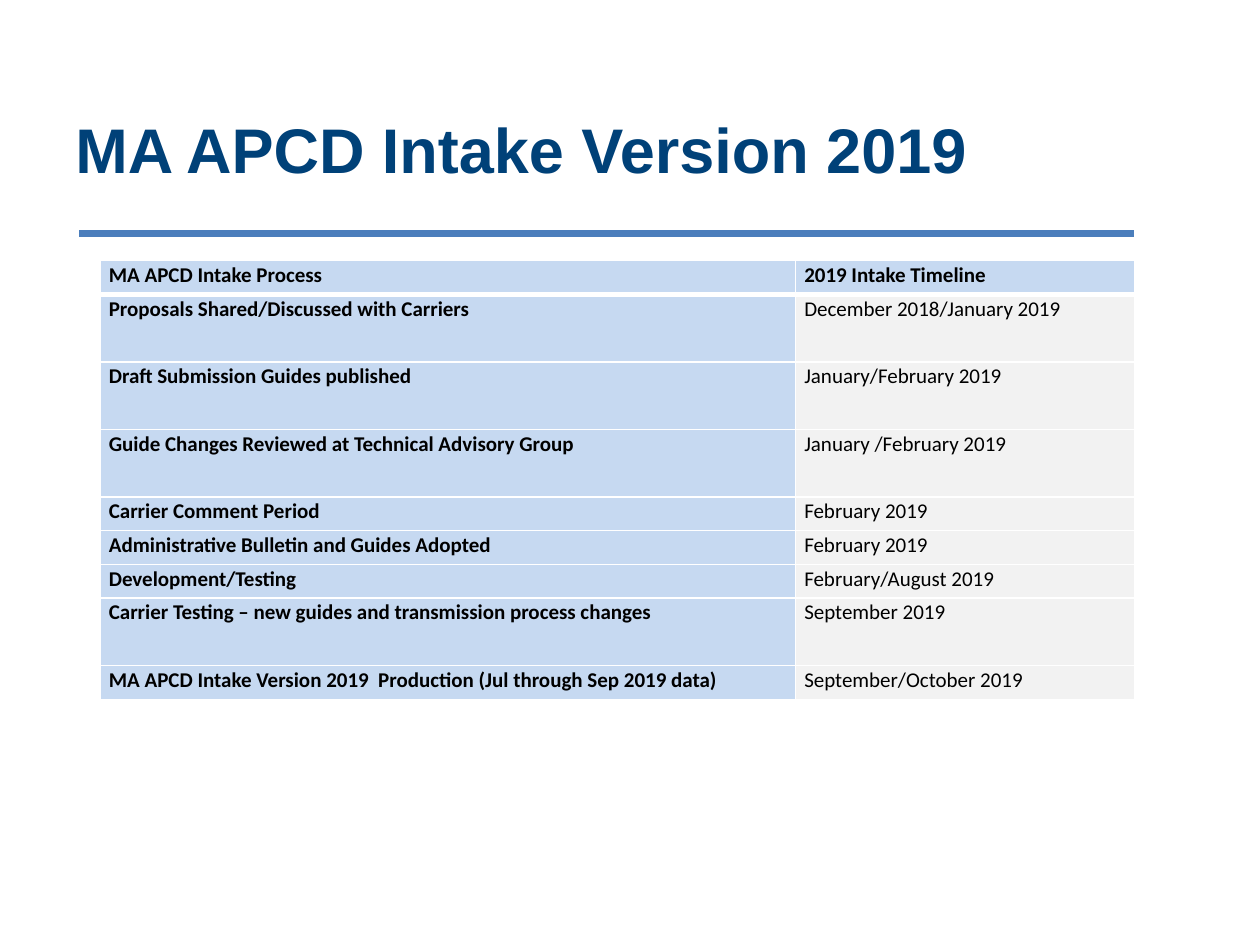
from dataclasses import dataclass
from lxml.etree import SubElement
from pptx import Presentation
from pptx.dml.color import RGBColor
from pptx.enum.shapes import MSO_CONNECTOR
from pptx.enum.text import MSO_ANCHOR
from pptx.oxml import parse_xml
from pptx.oxml.ns import nsdecls, qn
from pptx.util import Pt


@dataclass
class Theme:
    navy: str = "004178"
    rule: str = "4B7EBC"
    head: str = "C6D9F1"
    body: str = "F2F2F2"
    edge: str = "FFFFFF"
    ink: str = "000000"
    title: int = 36
    text: int = 12


theme = Theme()


def style(para, font, size, color, bold):
    for run in para.runs:
        run.font.name = font
        run.font.size = Pt(size)
        run.font.bold = bold
        run.font.color.rgb = RGBColor.from_string(color)


def border(cell, widths):
    props = cell._tc.get_or_add_tcPr()
    for spot, (side, width) in enumerate(widths.items()):
        line = parse_xml(
            f'<a:ln{side} {nsdecls("a")} w="{Pt(width)}"><a:solidFill>'
            f'<a:srgbClr val="{theme.edge}"/></a:solidFill></a:ln{side}>'
        )
        props.insert(spot, line)


deck = Presentation()
deck.slide_width, deck.slide_height = Pt(720), Pt(540)
slide = deck.slides.add_slide(deck.slide_layouts[6])

rule = slide.shapes.add_connector(
    MSO_CONNECTOR.STRAIGHT, Pt(45.2), Pt(133.3), Pt(648), Pt(133.3)
)
rule.line.color.rgb = RGBColor.from_string(theme.rule)
rule.line.width = Pt(4)
SubElement(rule._element.spPr, qn("a:effectLst"))

title = slide.shapes.add_textbox(Pt(36), Pt(44.6), Pt(612), Pt(80))
frame = title.text_frame
frame.word_wrap = True
frame.vertical_anchor = MSO_ANCHOR.MIDDLE
frame.text = "MA APCD Intake Version 2019"
style(frame.paragraphs[0], "Arial", theme.title, theme.navy, True)

unit = 19.3
rows = [
    ("MA APCD Intake Process", "2019 Intake Timeline", 1),
    ("Proposals Shared/Discussed with Carriers", "December 2018/January 2019", 2),
    ("Draft Submission Guides published", "January/February 2019", 2),
    ("Guide Changes Reviewed at Technical Advisory Group", "January /February 2019", 2),
    ("Carrier Comment Period", "February 2019", 1),
    ("Administrative Bulletin and Guides Adopted", "February 2019", 1),
    ("Development/Testing", "February/August 2019", 1),
    ("Carrier Testing – new guides and transmission process changes", "September 2019", 2),
    ("MA APCD Intake Version 2019  Production (Jul through Sep 2019 data)",
     "September/October 2019", 1),
]
wide = [397.4, 193.7]
high = unit * sum(row[2] for row in rows)
table = slide.shapes.add_table(
    len(rows), len(wide), Pt(57.2), Pt(149), Pt(sum(wide)), Pt(high)
).table
for col, width in zip(table.columns, wide):
    col.width = Pt(width)

for r, (*texts, lines) in enumerate(rows):
    table.rows[r].height = Pt(unit * lines)
    for c, text in enumerate(texts):
        cell = table.cell(r, c)
        strong = r == 0 or c == 0
        cell.fill.solid()
        cell.fill.fore_color.rgb = RGBColor.from_string(theme.head if strong else theme.body)
        cell.margin_left = cell.margin_right = Pt(5)
        cell.margin_top = cell.margin_bottom = 0
        cell.vertical_anchor = MSO_ANCHOR.TOP
        cell.text_frame.text = text
        para = cell.text_frame.paragraphs[0]
        para.line_spacing = 1.07
        style(para, "Calibri", theme.text, theme.ink, strong)
        border(cell, {"L": 1, "R": 1, "T": 3 if r == 1 else 1, "B": 3 if r == 0 else 1})

deck.save("out.pptx")
